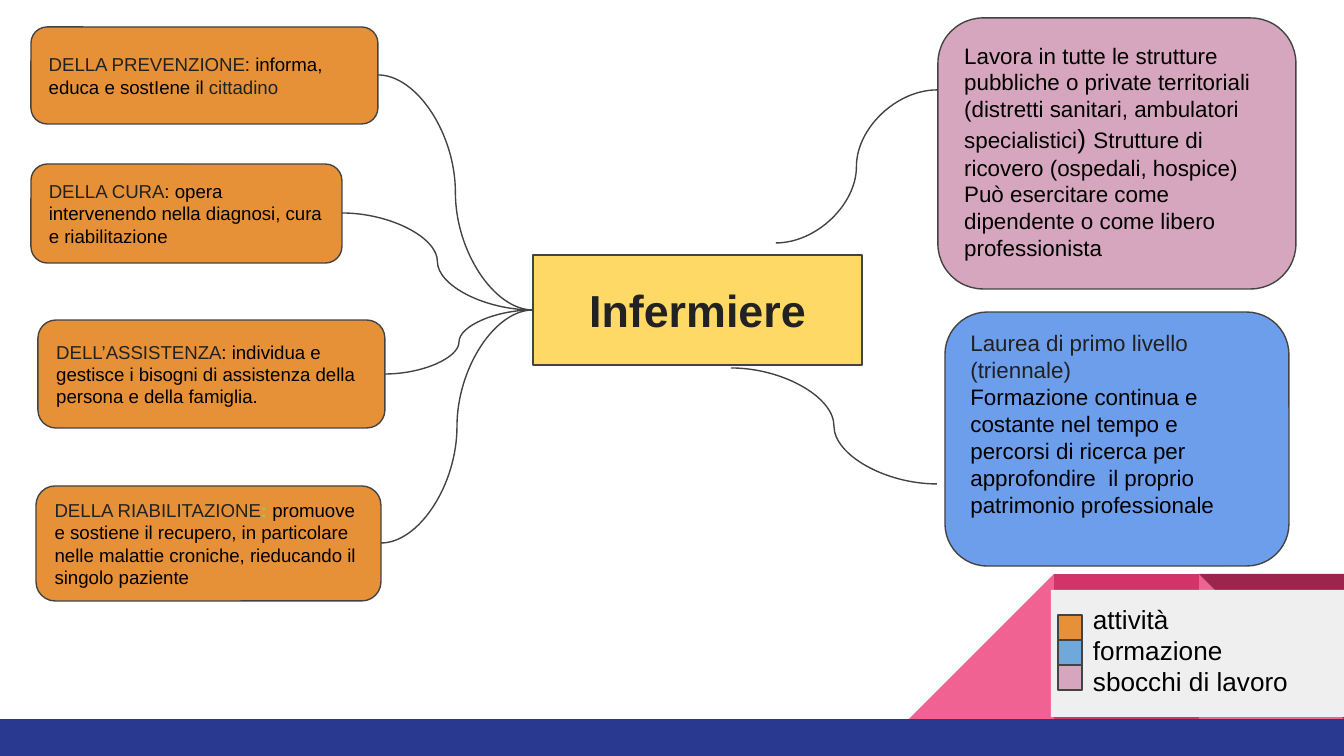
from lxml.etree import SubElement
from pptx import Presentation
from pptx.dml.color import RGBColor
from pptx.enum.shapes import MSO_CONNECTOR, MSO_SHAPE
from pptx.enum.text import MSO_ANCHOR, PP_ALIGN
from pptx.oxml.ns import qn
from pptx.util import Emu, Pt

EMU_PER_PX = 6804
INSET = 13
INK, BLACK, OUTLINE = "222222", "000000", "434343"
ORANGE, PINK = "E69138", "D5A6BD"


def px(length):
    return Emu(length * EMU_PER_PX)


def color(value):
    return RGBColor.from_string(value)


class ConceptMap:
    font_name = "Arial"
    line_width = Pt(0.75)

    def __init__(self, slide):
        self.slide = slide

    def box(self, left, top, width, height, fill, outlined=True, kind=MSO_SHAPE.RECTANGLE, rotation=0):
        shape = self.slide.shapes.add_shape(kind, px(left), px(top), px(width), px(height))
        shape.shadow.inherit = False
        shape.rotation = rotation
        shape.fill.solid()
        shape.fill.fore_color.rgb = color(fill)
        if outlined:
            shape.line.color.rgb = color(OUTLINE)
            shape.line.width = self.line_width
        else:
            shape.line.fill.background()
        return shape

    def rounded_box(self, left, top, width, height, fill):
        return self.box(left, top, width, height, fill, kind=MSO_SHAPE.ROUNDED_RECTANGLE)

    def label(self, shape, paragraphs, size, anchor=MSO_ANCHOR.MIDDLE, align=PP_ALIGN.LEFT,
              left_inset=INSET, bottom_inset=INSET):
        text_frame = shape.text_frame
        text_frame.word_wrap = True
        text_frame.vertical_anchor = anchor
        text_frame.margin_left, text_frame.margin_bottom = px(left_inset), px(bottom_inset)
        text_frame.margin_top = text_frame.margin_right = px(INSET)
        for index, runs in enumerate(paragraphs):
            paragraph = text_frame.add_paragraph() if index else text_frame.paragraphs[0]
            paragraph.alignment = align
            for text, ink, *style in runs:
                run = paragraph.add_run()
                run.text = text
                run.font.name = self.font_name
                run.font.color.rgb = color(ink)
                run.font.size = Pt(style[0] if style else size)
                run.font.bold = "bold" in style

    def curve(self, start, end):
        connector = self.slide.shapes.add_connector(
            MSO_CONNECTOR.CURVE, *map(px, start), *map(px, end))
        connector.line.color.rgb = color(OUTLINE)
        connector.line.width = self.line_width
        SubElement(connector._element.spPr, qn("a:effectLst"))


def draw_footer(concept_map):
    left, top, side = 909, 574, 145
    triangle, square = MSO_SHAPE.RIGHT_TRIANGLE, MSO_SHAPE.RECTANGLE
    tiles = [(2, "F06292", triangle, 0), (0, "F06292", triangle, 270),
             (1, "D23369", square, 0), (2, "9C254D", triangle, 180)]
    for column, fill, kind, rotation in tiles:
        concept_map.box(left + column * side, top, side, side, fill, False, kind, rotation)
    concept_map.box(0, 719, 1344, 37, "2A3990", False)


def draw_activities(concept_map, hub):
    activities = [
        ((31, 27, 347, 97), [("DELLA PREVENZIONE", INK), (": informa, educa e sostIene il ", BLACK),
                             ("cittadino", INK)]),
        ((31, 164, 311, 99), [("DELLA CURA", INK),
                              (": opera intervenendo nella diagnosi, cura e riabilitazione", BLACK)]),
        ((38, 320, 347, 108), [("DELL’ASSISTENZA", INK),
                               (": individua e gestisce i bisogni di assistenza della persona "
                                "e della famiglia.", BLACK)]),
        ((36, 486, 345, 115), [("DELLA RIABILITAZIONE", INK), (": ", "92D050", 10, "bold"),
                               ("promuove e sostiene il recupero, in particolare nelle malattie "
                                "croniche, rieducando il singolo paziente", BLACK)]),
    ]
    for (left, top, width, height), runs in activities:
        shape = concept_map.rounded_box(left, top, width, height, ORANGE)
        concept_map.label(shape, [runs], 10)
        concept_map.curve(hub, (left + width, top + height // 2))


def draw_career(concept_map):
    training = concept_map.rounded_box(945, 312, 344, 254, "6D9EEB")
    concept_map.label(training, [
        [("Laurea di primo livello (triennale)", "212121")],
        [("Formazione continua e costante nel tempo e percorsi di ricerca per approfondire  "
          "il proprio patrimonio professionale", BLACK)],
    ], 12, bottom_inset=INSET + 31)
    workplaces = concept_map.rounded_box(938, 18, 358, 271, PINK)
    concept_map.label(workplaces, [
        [("Lavora in tutte le strutture pubbliche o private territoriali (distretti sanitari, "
          "ambulatori specialistici", BLACK), (") ", BLACK, 14),
         ("Strutture di ricovero (ospedali, hospice)", BLACK)],
        [("Può esercitare come dipendente o come libero professionista", BLACK)],
    ], 12, bottom_inset=INSET + 4)
    concept_map.curve((776, 243), (937, 90))
    concept_map.curve((731, 368), (937, 484))


def draw_legend(concept_map):
    panel = concept_map.box(1051, 590, 293, 127, "EFEFEF", False)
    categories = ["attività", "formazione", "sbocchi di lavoro"]
    concept_map.label(panel, [[(category, BLACK)] for category in categories], 14,
                      anchor=MSO_ANCHOR.TOP, left_inset=42)
    for row, fill in enumerate([ORANGE, "6FA8DC", PINK]):
        concept_map.box(1058, 615 + row * 25, 24, 25, fill)


def main():
    presentation = Presentation()
    presentation.slide_width, presentation.slide_height = px(1344), px(756)
    concept_map = ConceptMap(presentation.slides.add_slide(presentation.slide_layouts[6]))
    draw_footer(concept_map)
    title = concept_map.box(533, 255, 329, 110, "FFD966")
    concept_map.label(title, [[("Infermiere", INK, 24, "bold")]], 24, align=PP_ALIGN.CENTER)
    draw_activities(concept_map, (533, 310))
    draw_career(concept_map)
    draw_legend(concept_map)
    presentation.save("out.pptx")


if __name__ == "__main__":
    main()
